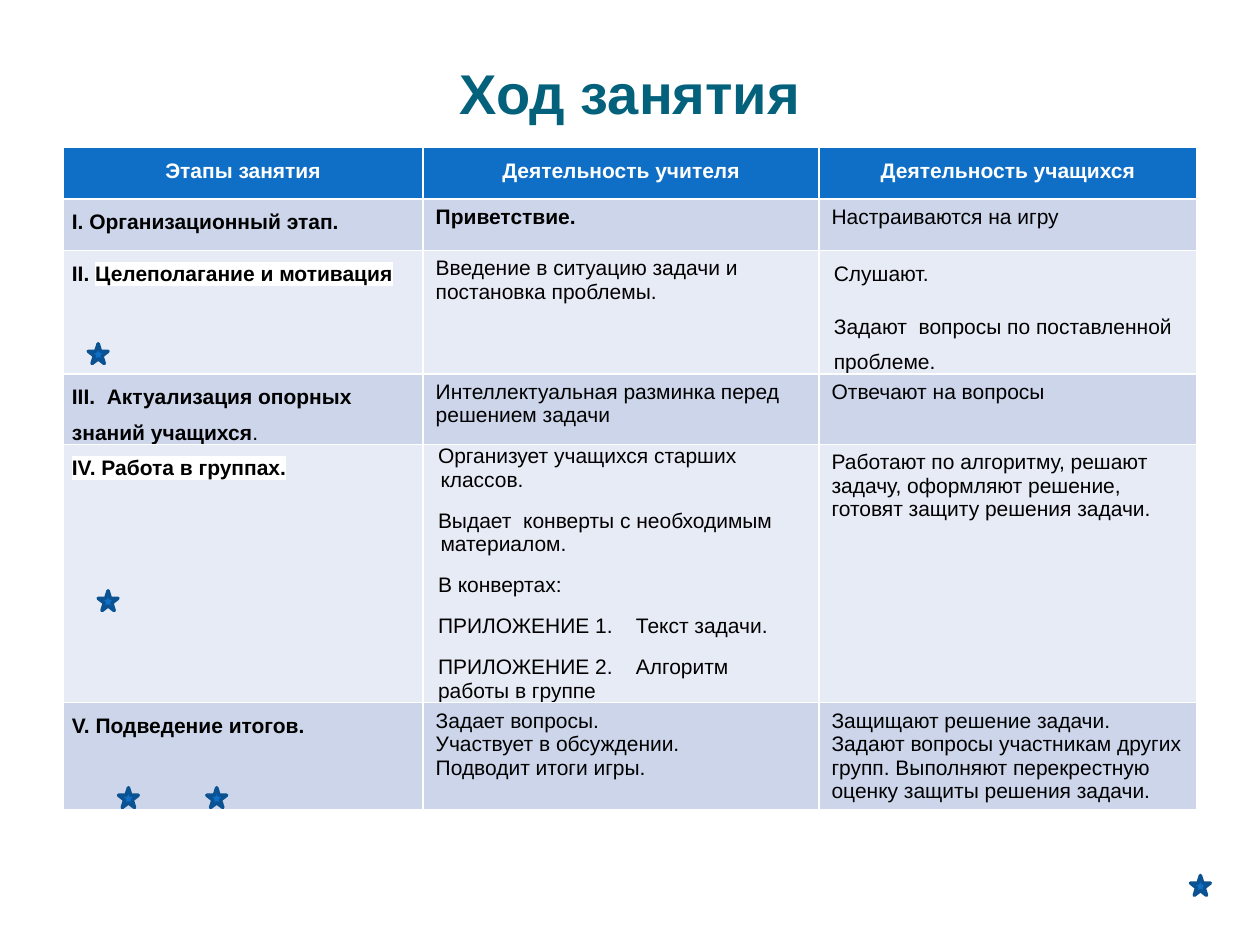
import pptx
import pptx.util
import pptx.dml.color
import pptx.enum.shapes
import pptx.enum.text
import pptx.oxml
import pptx.oxml.ns

Cm, Pt = pptx.util.Cm, pptx.util.Pt
ALIGN = pptx.enum.text.PP_ALIGN
COLORS = {"title": "04617B", "accent": "0F6FC6", "outline": "0B5292", "white": "FFFFFF",
          "text": "000000", "odd": "CCD5EA", "even": "E7EBF5"}


def rgb(name):
    return pptx.dml.color.RGBColor.from_string(COLORS[name])


def add_run(p, text, size, color, bold, highlight=False):
    r = p.add_run()
    r.text = text
    for key, value in {"name": "Arial", "size": Pt(size), "bold": bold}.items():
        setattr(r.font, key, value)
    r.font.color.rgb = rgb(color)
    if highlight:
        mark = pptx.oxml.parse_xml(
            f'<a:highlight {pptx.oxml.ns.nsdecls("a")}><a:srgbClr val="{COLORS["white"]}"/></a:highlight>')
        r.font.fill._xPr.find(pptx.oxml.ns.qn("a:solidFill")).addnext(mark)


prs = pptx.Presentation()
prs.slide_width, prs.slide_height = Cm(25.4), Cm(19.05)
s = prs.slides.add_slide(prs.slide_layouts[5])

title = s.shapes.title
box = {"left": Cm(1.27), "top": Cm(0.76), "width": Cm(22.86), "height": Cm(2.21)}
for key, value in box.items():
    setattr(title, key, value)
tf = title.text_frame
tf.vertical_anchor = pptx.enum.text.MSO_ANCHOR.MIDDLE
p = tf.paragraphs[0]
p.alignment = ALIGN.CENTER
add_run(p, "Ход занятия", 32, "title", True)

margins = {"margin_top": 0, "margin_bottom": 0}
narrow = {**margins, "margin_left": Cm(0.18), "margin_right": Cm(0.18)}
wide = {**margins, "margin_left": Cm(0.3), "margin_right": Cm(0.3)}
loose = {"line_spacing": 1.5, "space_after": Pt(10)}
STYLES = {
    "head": (narrow, {**loose, "alignment": ALIGN.CENTER}),
    "stage": (narrow, loose),
    "last": (narrow, {**loose, "alignment": ALIGN.JUSTIFY}),
    "spaced": (wide, loose),
    "steps": (wide, {"space_after": Pt(10)}),
    "plain": ({}, {}),
}

rows = [
    [("head", ["Этапы занятия"]), ("head", ["Деятельность учителя"]), ("head", ["Деятельность учащихся"])],
    [("stage", [[("I. Организационный этап.", True)]]),
     ("plain", [[("Приветствие.", True)]]),
     ("plain", ["Настраиваются на игру"])],
    [("stage", [[("II. ", True), ("Целеполагание и мотивация", True, True)]]),
     ("plain", ["Введение в ситуацию задачи и постановка проблемы."]),
     ("spaced", ["Слушают.", "Задают  вопросы по поставленной проблеме."])],
    [("stage", [[("III.  Актуализация опорных знаний учащихся", True), (".", False)]]),
     ("plain", ["Интеллектуальная разминка перед решением задачи"]),
     ("plain", ["Отвечают на вопросы"])],
    [("stage", [[("IV. Работа в группах.", True, True)]]),
     ("steps", ["Организует учащихся старших классов.",
                "Выдает  конверты с необходимым материалом.",
                "В конвертах:",
                "ПРИЛОЖЕНИЕ 1.    Текст задачи.",
                "ПРИЛОЖЕНИЕ 2.    Алгоритм работы в группе"]),
     ("plain", ["Работают по алгоритму, решают задачу, оформляют решение, готовят защиту решения задачи."])],
    [("last", [[("V. Подведение итогов.", True)]]),
     ("plain", ["Задает вопросы.", "Участвует в обсуждении.", "Подводит итоги игры."]),
     ("plain", ["Защищают решение задачи. Задают вопросы участникам других групп. "
                "Выполняют перекрестную оценку защиты решения задачи."])],
]

frame = s.shapes.add_table(len(rows), 3, Cm(1.27), Cm(2.97), Cm(22.86), Cm(14))
table = frame.table
for column, width in zip(table.columns, (7.26, 7.98, 7.62)):
    column.width = Cm(width)

for i, row in enumerate(rows):
    table.rows[i].height = Cm(1.04)
    fill = "accent" if i == 0 else "odd" if i % 2 else "even"
    for j, (style, paragraphs) in enumerate(row):
        cell = table.cell(i, j)
        cell.fill.solid()
        cell.fill.fore_color.rgb = rgb(fill)
        cell_format, paragraph_format = STYLES[style]
        for key, value in cell_format.items():
            setattr(cell, key, value)
        tf = cell.text_frame
        for n, runs in enumerate(paragraphs):
            p = tf.add_paragraph() if n else tf.paragraphs[0]
            for key, value in paragraph_format.items():
                setattr(p, key, value)
            if style == "steps" and n < 3:
                pPr = p._p.get_or_add_pPr()
                pPr.set("marL", str(Cm(0.05)))
                pPr.set("indent", str(-Cm(0.05)))
            for run in [(runs, i == 0)] if isinstance(runs, str) else runs:
                add_run(p, run[0], 12, "text" if i else "white", *run[1:])
frame.height = Cm(14)

for left, top in ((1.78, 6.93), (1.98, 11.91), (4.17, 15.88), (2.39, 15.88), (24, 17.65)):
    sp = s.shapes.add_shape(pptx.enum.shapes.MSO_SHAPE.STAR_5_POINT, Cm(left), Cm(top), Cm(0.4), Cm(0.4))
    sp.shadow.inherit = False
    sp.fill.solid()
    sp.fill.fore_color.rgb = rgb("accent")
    sp.line.color.rgb = rgb("outline")
    sp.line.width = Pt(2)

prs.save("out.pptx")
